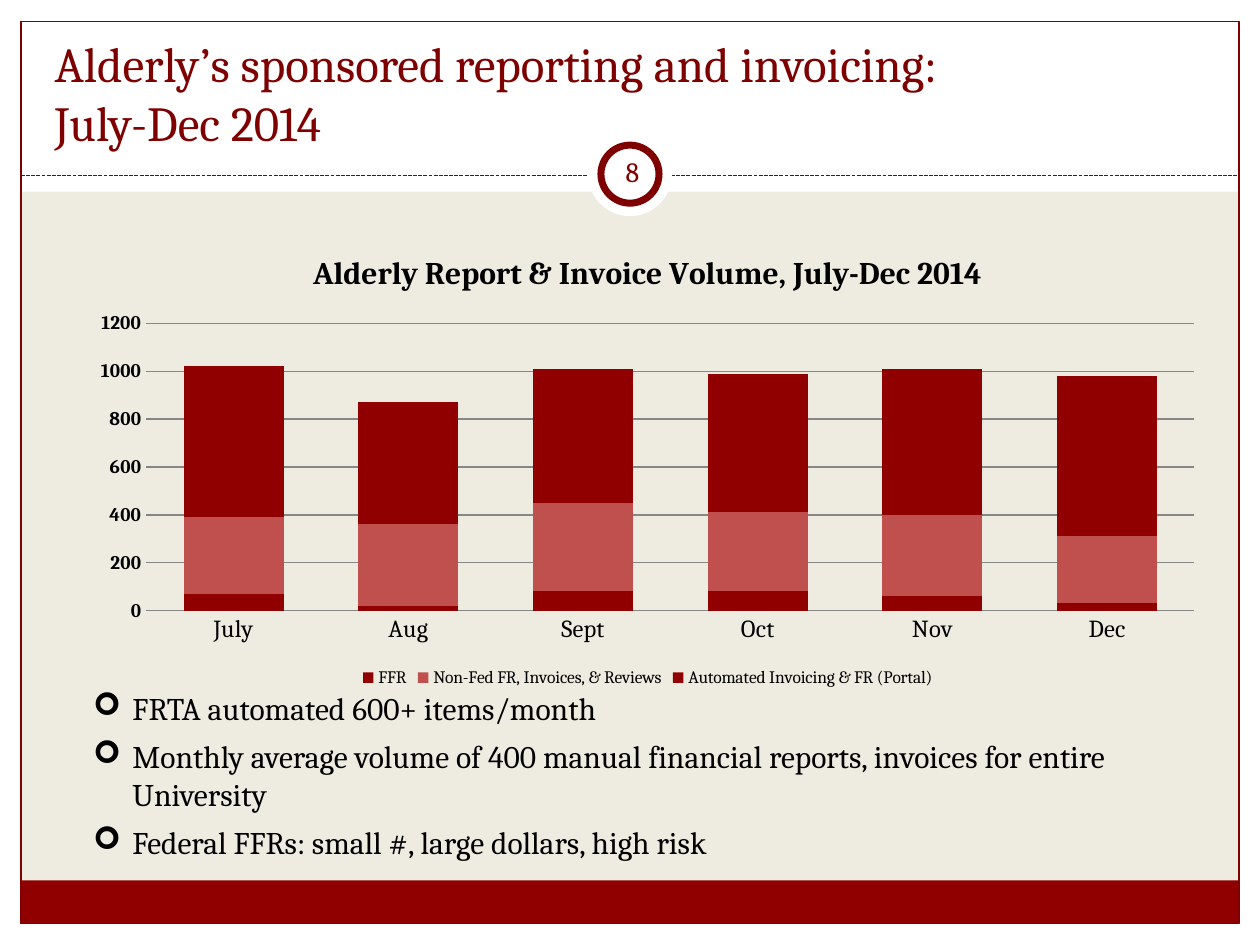
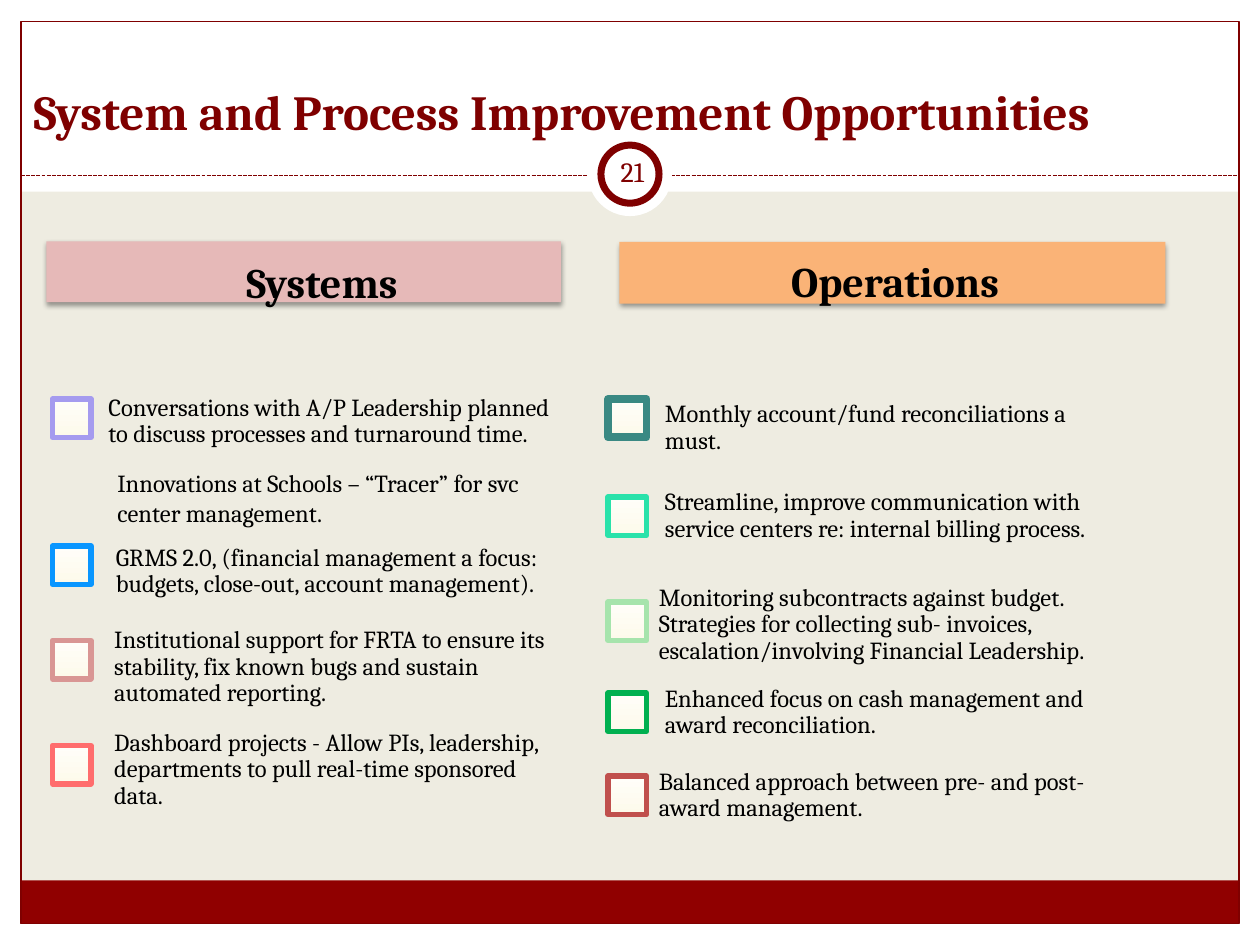
from pptx import Presentation
from pptx.chart.data import CategoryChartData
from pptx.dml.color import RGBColor
from pptx.enum.chart import XL_CHART_TYPE as ChartType, XL_LEGEND_POSITION as LegendPosition, XL_TICK_MARK as TickMark
from pptx.enum.dml import MSO_LINE as Dash
from pptx.enum.shapes import MSO_CONNECTOR as Connector, MSO_SHAPE as Shape
from pptx.enum.text import MSO_ANCHOR as Anchor, MSO_AUTO_SIZE as AutoSize, PP_ALIGN as Align
from pptx.oxml import parse_xml
from pptx.oxml.ns import nsdecls
from pptx.util import Pt

FONT = "Cambria"
COLORS = {
    "paper": "EEECE1", "white": "FFFFFF", "black": "000000",
    "crimson": "900000", "maroon": "7F0000", "brick": "C0504D", "grid": "868686",
    "rose": "E6B9B8", "orange": "FAB377", "cream": "FDFAEB", "ivory": "FFFEF9",
    "violet": "A59BEF", "blue": "0996FF", "pink": "D99694", "coral": "FF6D6D",
    "teal": "3A8983", "mint": "29E2AA", "pale green": "A6E4AC", "green": "00B050",
}
RGB = {name: RGBColor.from_string(value) for name, value in COLORS.items()}


def add_box(slide, kind, place, fill=None, line=None, weight=0.75):
    box = slide.shapes.add_shape(kind, *map(Pt, place))
    box.shadow.inherit = False
    if fill:
        box.fill.solid()
        box.fill.fore_color.rgb = RGB[fill]
    else:
        box.fill.background()
    if line:
        box.line.color.rgb = RGB[line]
        box.line.width = Pt(weight)
    else:
        box.line.fill.background()
    return box


def write_text(box, place, lines, size, color="black", bold=False, align=Align.LEFT,
               anchor=Anchor.TOP, inset=None):
    """Place a text shape and fill it, one paragraph for each line."""
    box.left, box.top, box.width, box.height = map(Pt, place)
    frame = box.text_frame
    frame.word_wrap = True
    frame.auto_size = AutoSize.NONE
    frame.vertical_anchor = anchor
    if inset is not None:
        frame.margin_left = frame.margin_right = Pt(inset)
        frame.margin_top = frame.margin_bottom = Pt(inset)
    for index, line in enumerate(lines):
        para = frame.add_paragraph() if index else frame.paragraphs[0]
        para.alignment = align
        para.space_before = Pt(0)
        for part_index, part in enumerate(line.split("\n")):
            if part_index:
                para.add_line_break()
            span = para.add_run()
            span.text = part
            span.font.name = FONT
            span.font.size = Pt(size)
            span.font.bold = bold
            span.font.color.rgb = RGB[color]
    return frame.paragraphs


deck = Presentation()
deck.slide_width, deck.slide_height = Pt(720), Pt(540)
master = deck.slide_master
master.background.fill.solid()
master.background.fill.fore_color.rgb = RGB["paper"]
volume_page = deck.slides.add_slide(deck.slide_layouts[1])
ideas_page = deck.slides.add_slide(deck.slide_layouts[5])

# Shared frame: margins, footer band, border, rule and number badge
frame_parts = [add_box(volume_page, Shape.RECTANGLE, place, "white") for place in (
    (0, 528, 720, 12), (0, 0, 720, 109.5), (0, 0, 12, 540), (708, 0, 12, 540))]
frame_parts.append(add_box(volume_page, Shape.RECTANGLE, (11.7, 503, 696, 24.8), "crimson"))
frame_parts.append(add_box(volume_page, Shape.RECTANGLE, (12, 12.3, 696, 515.5), line="maroon"))
rule = volume_page.shapes.add_connector(Connector.STRAIGHT, Pt(12), Pt(100.5), Pt(708), Pt(100.5))
rule.line.color.rgb = RGB["maroon"]
rule.line.width = Pt(0.75)
rule.line.dash_style = Dash.SQUARE_DOT
rule._element.spPr.append(parse_xml(f"<a:effectLst {nsdecls('a')}/>"))
frame_parts.append(rule)
frame_parts.append(add_box(volume_page, Shape.OVAL, (336, 75.5, 48, 48), "white"))
frame_parts.append(add_box(volume_page, Shape.OVAL, (343.4, 82.9, 33.2, 33.2), "white", "maroon", 4))

# The frame belongs on the master, so every page inherits it
for number, part in enumerate(frame_parts, start=101):
    part._element.xpath(".//p:cNvPr")[0].set("id", str(number))
    master.shapes._spTree.append(part._element)

# Titles and page numbers
for page, title, place, bold, number in (
    (volume_page, "Alderly’s sponsored reporting and invoicing:\nJuly-Dec 2014",
     (24, 30, 672, 60), False, "8"),
    (ideas_page, "System and Process Improvement Opportunities",
     (12, 18, 708, 66), True, "21"),
):
    write_text(page.shapes.title, place, [title], 28, "maroon", bold, anchor=Anchor.BOTTOM)
    badge = page.shapes.add_textbox(0, 0, 0, 0)
    write_text(badge, (343.4, 80.6, 36, 34.6), [number], 16, "maroon",
               align=Align.CENTER, anchor=Anchor.MIDDLE, inset=3.6)

# Volume chart
volume_data = CategoryChartData()
volume_data.categories = ["July", "Aug", "Sept", "Oct", "Nov", "Dec"]
volume_series = (
    ("FFR", (70, 20, 80, 80, 60, 30), "crimson"),
    ("Non-Fed FR, Invoices, & Reviews", (320, 340, 370, 330, 340, 280), "brick"),
    ("Automated Invoicing & FR (Portal)", (630, 510, 560, 580, 610, 670), "crimson"),
)
for name, values, _ in volume_series:
    volume_data.add_series(name, values)
chart = volume_page.shapes.add_chart(
    ChartType.COLUMN_STACKED, Pt(44.6), Pt(131.8), Pt(651), Pt(264), volume_data).chart
chart.font.name = FONT
chart.font.size = Pt(10)
chart.font.color.rgb = RGB["black"]
chart.has_title = True
chart_title = chart.chart_title.text_frame.paragraphs[0].add_run()
chart_title.text = "Alderly Report & Invoice Volume, July-Dec 2014"
chart_title.font.name = FONT
chart_title.font.size = Pt(18)
chart_title.font.bold = True
chart.has_legend = True
chart.legend.position = LegendPosition.BOTTOM
chart.legend.include_in_layout = False
plot = chart.plots[0]
plot.gap_width, plot.overlap = 75, 100
plot.vary_by_categories = False
for series, (_, _, color) in zip(plot.series, volume_series):
    series.format.fill.solid()
    series.format.fill.fore_color.rgb = RGB[color]
months, counts = chart.category_axis, chart.value_axis
for axis, size in ((months, 14), (counts, 11)):
    axis.major_tick_mark = axis.minor_tick_mark = TickMark.NONE
    axis.tick_labels.font.size = Pt(size)
months.format.line.color.rgb = RGB["grid"]
counts.tick_labels.font.bold = True
counts.minimum_scale, counts.maximum_scale, counts.major_unit = 0, 1200, 200
counts.format.line.fill.background()
counts.major_gridlines.format.line.color.rgb = RGB["grid"]

# Volume remarks
remarks = write_text(volume_page.placeholders[1], (46, 390, 636, 106.5), [
    "FRTA automated 600+ items/month",
    "Monthly average volume of 400 manual financial reports, invoices for entire University",
    "Federal FFRs: small #, large dollars, high risk",
], 18)
for para in remarks:
    para.space_after = Pt(6)
    settings = para._p.get_or_add_pPr()
    settings.set("marL", str(Pt(22.5)))
    settings.set("indent", str(Pt(-22.5)))
    settings.append(parse_xml(f'<a:buFont {nsdecls("a")} typeface="Wingdings"/>'))
    settings.append(parse_xml(f'<a:buChar {nsdecls("a")} char="➢"/>'))

# Column headings: a shaded band with the heading low on it
for heading, band_place, text_place, color in (
    ("Systems", (26.6, 138, 294, 34.6), (37, 120, 294, 86), "rose"),
    ("Operations", (354, 138.2, 312, 35.3), (345, 120, 333, 84), "orange"),
):
    band = add_box(ideas_page, Shape.RECTANGLE, band_place, color)
    band._element.spPr.remove(band._element.spPr.find(
        "{http://schemas.openxmlformats.org/drawingml/2006/main}effectLst"))
    band._element.spPr.append(parse_xml(
        f'<a:effectLst {nsdecls("a")}><a:outerShdw blurRad="{Pt(3.1)}" dist="{Pt(1.6)}" '
        f'dir="5400000" rotWithShape="0"><a:srgbClr val="{COLORS["black"]}">'
        '<a:alpha val="38000"/></a:srgbClr></a:outerShdw></a:effectLst>'))
    caption = ideas_page.shapes.add_textbox(0, 0, 0, 0)
    write_text(caption, text_place, [heading], 24, bold=True, align=Align.CENTER,
               anchor=Anchor.MIDDLE, inset=3)[0].line_spacing = 0.9

# Checklists: box top, box colour, border weight, text left, text top, text
systems = (
    (228, "violet", 3, 54, 216,
     "Conversations with A/P Leadership planned to discuss processes and turnaround time."),
    (312, "blue", 3, 58.3, 301.7,
     "GRMS 2.0, (financial management a focus: budgets, close-out, account management)."),
    (366, "pink", 3, 57.3, 356.4,
     "Institutional support for FRTA to ensure its stability, fix known bugs and sustain "
     "automated reporting."),
    (426, "coral", 3, 57.3, 415,
     "Dashboard projects - Allow PIs, leadership, departments to pull real-time sponsored data."),
)
operations = (
    (228, "teal", 4.5, 372, 219.6, "Monthly account/fund reconciliations a must."),
    (284, "mint", 3, 372, 270,
     "Streamline, improve communication with service centers re: internal billing process."),
    (344, "pale green", 3, 368.5, 332,
     "Monitoring subcontracts against budget. Strategies for collecting sub- invoices, "
     "escalation/involving Financial Leadership."),
    (396, "green", 3, 372, 382.2, "Enhanced focus on cash management and award reconciliation."),
    (443.5, "brick", 3, 368.5, 429.5, "Balanced approach between pre- and post-award management."),
)
for box_left, items in ((30, systems), (347.5, operations)):
    for box_top, color, weight, text_left, text_top, text in items:
        checkbox = add_box(ideas_page, Shape.RECTANGLE, (box_left, box_top, 22, 22),
                           line=color, weight=weight)
        checkbox.fill.gradient()
        checkbox.fill.gradient_angle = 90
        for stop, shade in zip(checkbox.fill.gradient_stops, ("cream", "ivory")):
            stop.color.rgb = RGB[shade]
        label = ideas_page.shapes.add_textbox(0, 0, 0, 0)
        write_text(label, (text_left, text_top, 274, 50), [text], 14,
                   anchor=Anchor.MIDDLE, inset=8)[0].line_spacing = 0.9

# Unboxed note between the first two systems
note = ideas_page.shapes.add_textbox(0, 0, 0, 0)
write_text(note, (60, 264, 246, 41),
           ["Innovations at Schools – “Tracer” for svc center management."], 14)

deck.save("out.pptx")
